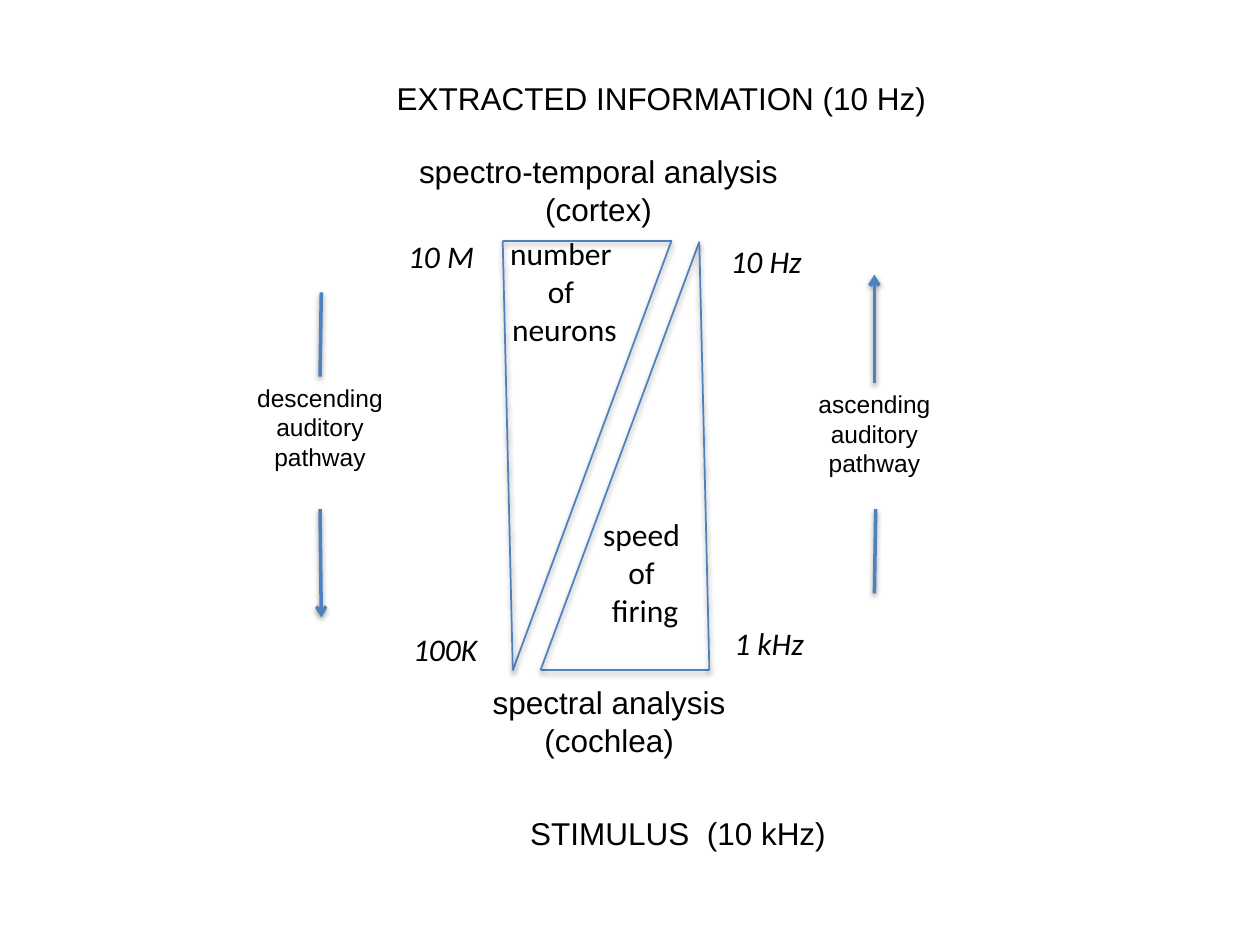
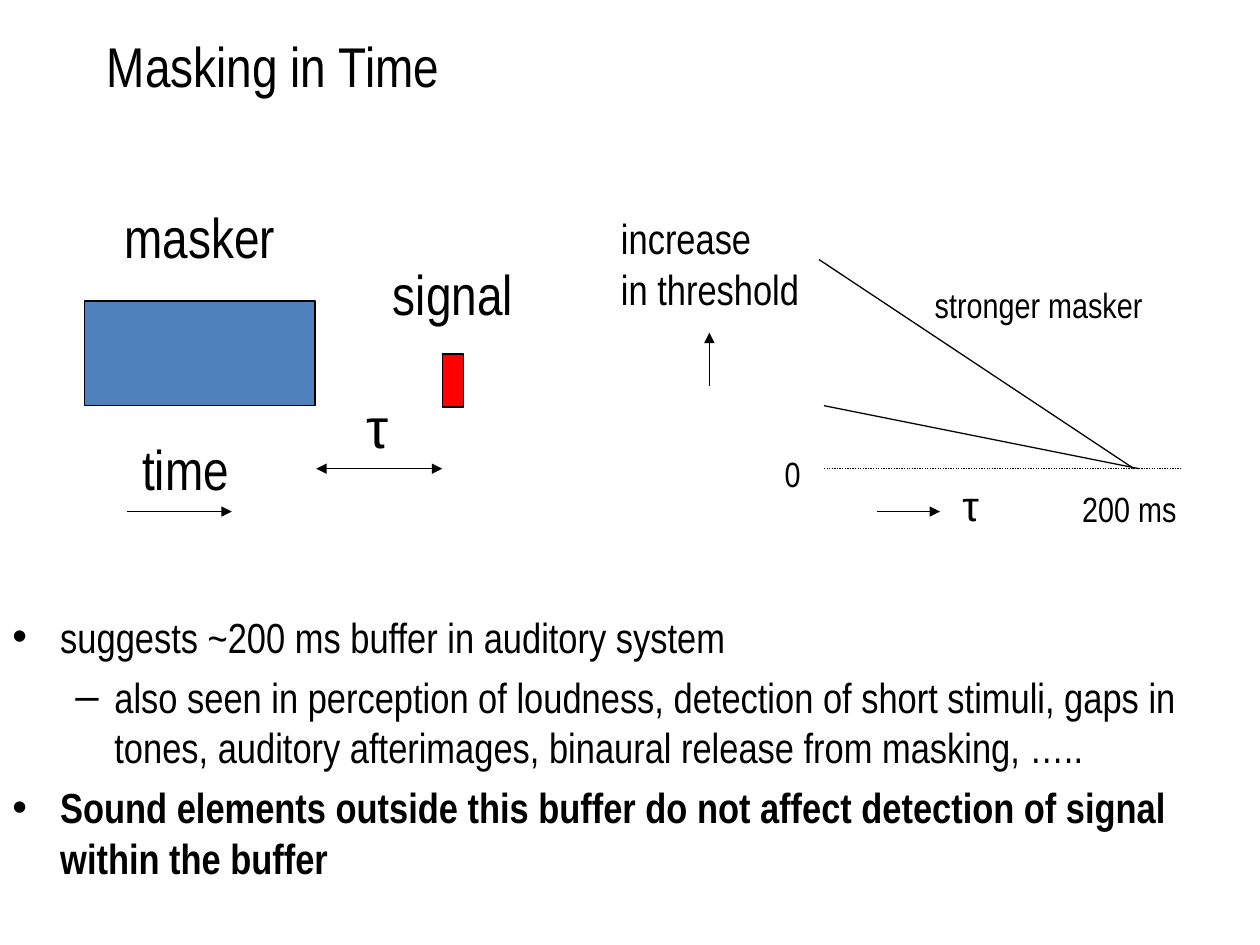
from dataclasses import dataclass
from itertools import pairwise

from lxml import etree
from pptx import Presentation
from pptx import util as u
from pptx.dml.color import RGBColor
from pptx.enum import dml, shapes, text
from pptx.oxml.ns import qn

BLACK, BLUE, RED = "000000", "4F81BD", "FF0000"
ARIAL, NARROW, CALIBRI = "Arial", "Arial Narrow", "Calibri"
LEFT, CENTER = text.PP_ALIGN.LEFT, text.PP_ALIGN.CENTER


@dataclass
class Label:
    wording: str
    left: float
    top: float
    width: float
    height: float
    size: int = 18
    font: str = ARIAL
    align: text.PP_ALIGN = LEFT
    italic: bool = False
    wrap: bool = False


@dataclass
class Stroke:
    x1: float
    y1: float
    x2: float
    y2: float
    color: str = BLACK
    weight: float = 0.75
    head: str = ""
    tail: str = ""
    dotted: bool = False
    shadow: bool = False


@dataclass
class Block:
    left: float
    top: float
    width: float
    height: float
    color: str


@dataclass
class Bullet:
    wording: str
    mark: str = "•"
    margin: float = 0.38
    hang: float = 0.38
    bold: bool = False


def rgb(color: str) -> RGBColor:
    return RGBColor.from_string(color)


def add_label(page, label: Label):
    box = page.shapes.add_textbox(
        u.Inches(label.left), u.Inches(label.top), u.Inches(label.width), u.Inches(label.height))
    frame = box.text_frame
    frame.text = label.wording
    frame.word_wrap = label.wrap
    for para in frame.paragraphs:
        para.alignment = label.align
        for span in para.runs:
            span.font.size = u.Pt(label.size)
            span.font.name = label.font
            span.font.italic = label.italic
            span.font.color.rgb = rgb(BLACK)
    return box


def add_stroke(page, stroke: Stroke) -> None:
    connector = page.shapes.add_connector(
        shapes.MSO_CONNECTOR.STRAIGHT,
        u.Inches(stroke.x1), u.Inches(stroke.y1), u.Inches(stroke.x2), u.Inches(stroke.y2))
    connector.line.color.rgb = rgb(stroke.color)
    connector.line.width = u.Pt(stroke.weight)
    if stroke.dotted:
        connector.line.dash_style = dml.MSO_LINE.ROUND_DOT
    properties = connector._element.spPr
    outline = properties.find(qn("a:ln"))
    for tag, kind in (("a:headEnd", stroke.head), ("a:tailEnd", stroke.tail)):
        if kind:
            etree.SubElement(outline, qn(tag), type=kind)
    effects = etree.SubElement(properties, qn("a:effectLst"))
    if stroke.shadow:
        shade = etree.SubElement(effects, qn("a:outerShdw"), blurRad="40000", dist="20000",
                                 dir="5400000", rotWithShape="0")
        tint = etree.SubElement(shade, qn("a:srgbClr"), val=BLACK)
        etree.SubElement(tint, qn("a:alpha"), val="38000")


def add_block(page, block: Block) -> None:
    shape = page.shapes.add_shape(
        shapes.MSO_SHAPE.RECTANGLE,
        u.Inches(block.left), u.Inches(block.top), u.Inches(block.width), u.Inches(block.height))
    shape.shadow.inherit = False
    shape.fill.solid()
    shape.fill.fore_color.rgb = rgb(block.color)
    shape.line.color.rgb = rgb(BLACK)
    shape.line.width = u.Pt(0.75)


def add_bullets(page, area: Label, bullets: list[Bullet]) -> None:
    box = add_label(page, area)
    for para, bullet in zip(box.text_frame.paragraphs, bullets):
        para.space_before = u.Pt(5.6)
        para.runs[0].font.bold = bullet.bold
        settings = para._p.get_or_add_pPr()
        settings.set("marL", str(u.Inches(bullet.margin)))
        settings.set("indent", str(-u.Inches(bullet.hang)))
        etree.SubElement(settings, qn("a:buFont"), typeface=ARIAL)
        etree.SubElement(settings, qn("a:buChar"), char=bullet.mark)


def build_pathway(page) -> None:
    neuron_triangle = [(3.99, 1.91), (5.33, 1.91), (4.07, 5.32)]
    firing_triangle = [(5.63, 5.32), (4.29, 5.32), (5.55, 1.92)]
    for corners in (neuron_triangle, firing_triangle):
        for start, end in pairwise(corners + corners[:1]):
            add_stroke(page, Stroke(*start, *end, BLUE, 1, shadow=True))

    for ends, tail in [
        ((2.55, 2.32, 2.54, 2.99), ""),
        ((2.54, 4.04, 2.55, 4.9), "arrow"),
        ((6.95, 4.04, 6.94, 4.71), ""),
        ((6.94, 3.04, 6.94, 2.18), "arrow"),
    ]:
        add_stroke(page, Stroke(*ends, BLUE, 2, tail=tail, shadow=True))

    for label in [
        Label("EXTRACTED INFORMATION (10 Hz)", 3.05, 0.58, 4.45, 0.4),
        Label("STIMULUS  (10 kHz)", 4.11, 6.41, 2.57, 0.4),
        Label("spectro-temporal analysis\n(cortex)", 3.21, 1.16, 3.08, 0.71, align=CENTER),
        Label("spectral analysis\n(cochlea)", 3.8, 5.37, 2.07, 1.01, align=CENTER),
        Label("descending\nauditory\npathway", 1.92, 2.99, 1.24, 0.98, 14, align=CENTER),
        Label("ascending\nauditory\npathway", 6.38, 3.04, 1.12, 0.98, 14, align=CENTER),
        Label("number \nof \nneurons", 3.68, 1.81, 1.6, 1.23, 18, CALIBRI, CENTER, wrap=True),
        Label("speed \nof \nfiring", 4.21, 4.04, 1.82, 1.23, 18, CALIBRI, CENTER, wrap=True),
    ]:
        add_label(page, label)

    for wording, left, top in [
        ("10 M", 3.14, 1.83), ("100K", 3.18, 4.95), ("10 Hz", 5.7, 1.87), ("1 kHz", 5.73, 4.9),
    ]:
        add_label(page, Label(wording, left, top, 0.94, 0.49, 18, CALIBRI, italic=True, wrap=True))


def build_masking(page) -> None:
    title = add_label(page, Label("Masking in Time", 0.75, 0.06, 8.5, 0.92, 32, NARROW, wrap=True))
    title.text_frame.vertical_anchor = text.MSO_ANCHOR.MIDDLE

    add_block(page, Block(0.67, 2.39, 1.83, 0.83, BLUE))
    add_block(page, Block(3.51, 2.81, 0.17, 0.42, RED))

    baseline, arrow_row, tip = 3.72, 4.06, "triangle"
    for stroke in [
        Stroke(2.51, baseline, 3.51, baseline, head=tip, tail=tip),
        Stroke(1.01, arrow_row, 1.84, arrow_row, tail=tip),
        Stroke(6.96, arrow_row, 7.46, arrow_row, tail=tip),
        Stroke(5.63, 3.06, 5.63, 2.64, tail=tip),
        Stroke(6.5, 2.06, 9, baseline),
        Stroke(6.54, 3.22, 9.04, baseline),
        Stroke(6.54, baseline, 9.38, baseline, dotted=True),
    ]:
        add_stroke(page, stroke)

    for label in [
        Label("masker", 0.89, 1.56, 1.4, 0.63, 32, NARROW),
        Label("signal", 3.02, 2.01, 1.16, 0.63, 32, NARROW),
        Label("time", 1.03, 3.4, 0.89, 0.63, 32, NARROW),
        Label("τ", 2.81, 3.07, 0.4, 0.63, 32),
        Label("increase\nin threshold", 4.83, 1.64, 1.62, 0.9, 24, NARROW),
        Label("τ", 7.54, 3.76, 0.35, 0.5, 24),
        Label("stronger masker", 7.32, 2.2, 1.85, 0.43, 20, NARROW),
        Label("0", 6.13, 3.54, 0.33, 0.43, 20, NARROW),
        Label("200 ms", 8.49, 3.82, 0.95, 0.43, 20, NARROW),
    ]:
        add_label(page, label)

    bullets = [
        Bullet("suggests ~200 ms buffer in auditory system"),
        Bullet("also seen in perception of loudness, detection of short stimuli, gaps in tones, "
               "auditory afterimages, binaural release from masking, …..", "–", 0.81, 0.31),
        Bullet("Sound elements outside this buffer do not affect detection of signal "
               "within the buffer", bold=True),
    ]
    wording = "\n".join(bullet.wording for bullet in bullets)
    add_bullets(page, Label(wording, 0, 4.8, 9.74, 2.25, 24, NARROW, wrap=True), bullets)


def main() -> None:
    deck = Presentation()
    deck.slide_width, deck.slide_height = u.Inches(10), u.Inches(7.5)
    for build in (build_pathway, build_masking):
        build(deck.slides.add_slide(deck.slide_layouts[6]))
    deck.save("out.pptx")


if __name__ == "__main__":
    main()
